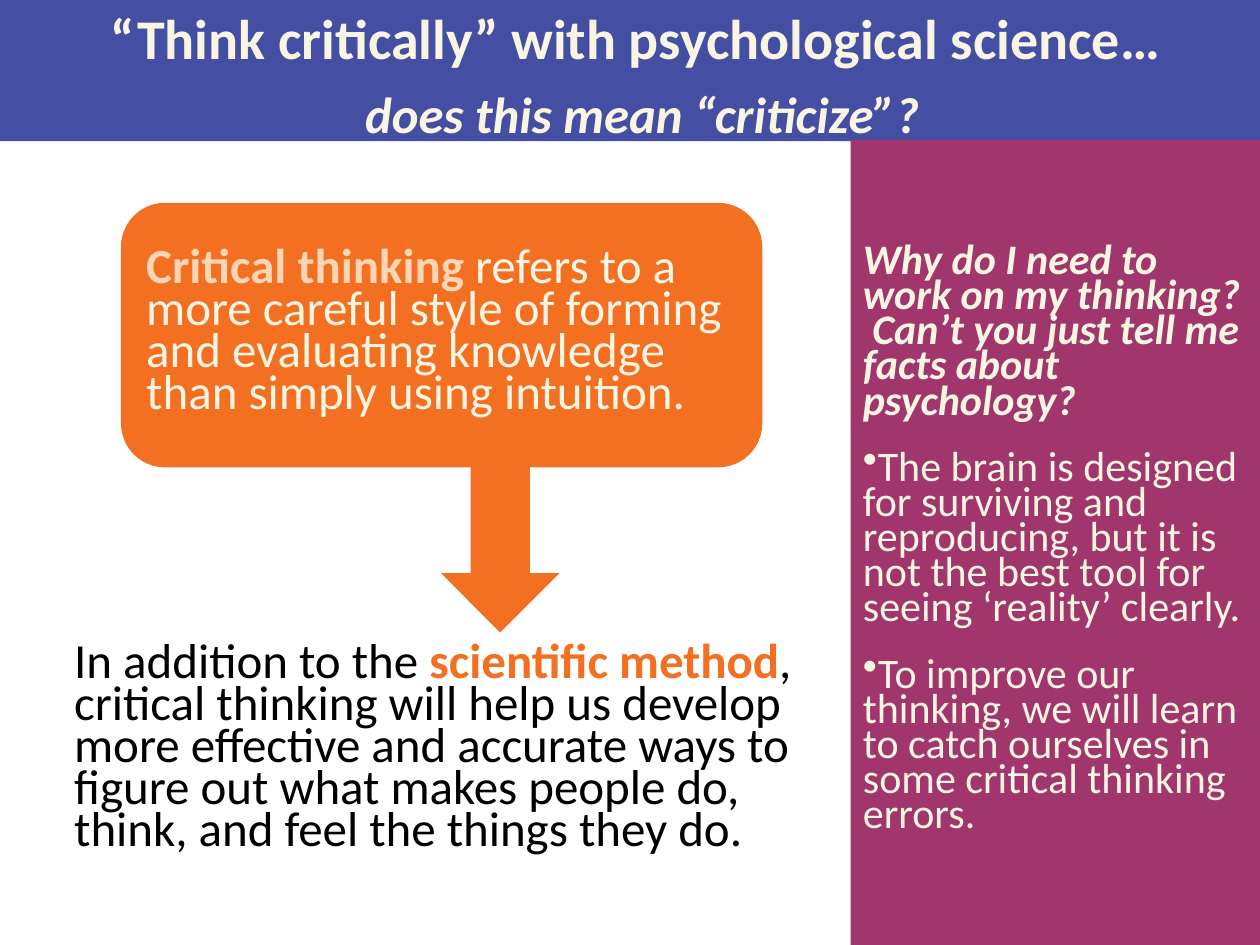
"""Build a slide on critical thinking in psychological science."""
from dataclasses import dataclass

from lxml.etree import SubElement
from pptx import Presentation
from pptx.dml.color import RGBColor
from pptx.enum.shapes import MSO_SHAPE as Shape
from pptx.enum.text import MSO_ANCHOR as Anchor, PP_ALIGN as Align
from pptx.oxml.ns import qn
from pptx.util import Inches, Pt


@dataclass(frozen=True)
class Theme:
    font: str = "Calibri"
    blue: RGBColor = RGBColor(0x44, 0x4E, 0xA2)
    orange: RGBColor = RGBColor(0xF3, 0x6F, 0x21)
    plum: RGBColor = RGBColor(0xA0, 0x36, 0x6C)
    cream: RGBColor = RGBColor(0xF8, 0xF6, 0xE3)
    peach: RGBColor = RGBColor(0xFC, 0xD5, 0xB5)
    black: RGBColor = RGBColor(0, 0, 0)
    title: Pt = Pt(32)
    subtitle: Pt = Pt(29)
    body: Pt = Pt(28)
    side: Pt = Pt(24)


theme = Theme()


def add_block(kind, left, top, width, height, fill=None):
    box = page.shapes.add_shape(kind, Inches(left), Inches(top), Inches(width), Inches(height))
    box.shadow.inherit = False
    box.line.fill.background()
    if fill is None:
        box.fill.background()
    else:
        box.fill.solid()
        box.fill.fore_color.rgb = fill
    box.text_frame.word_wrap = True
    box.text_frame.vertical_anchor = Anchor.MIDDLE
    return box


def style(para, size, color, leading, before=0, after=0, align=Align.LEFT):
    para.alignment = align
    para.line_spacing = Pt(leading)
    para.space_before, para.space_after = Pt(before), Pt(after)
    para.font.name = theme.font
    para.font.size = size
    para.font.color.rgb = color


deck = Presentation()
deck.slide_width, deck.slide_height = Inches(10), Inches(7.5)
page = deck.slides.add_slide(deck.slide_layouts[6])

definition = add_block(Shape.ROUNDED_RECTANGLE, 0.96, 1.61, 5.09, 2.1, theme.orange)
method = add_block(Shape.RECTANGLE, 0.49, 4.77, 6.02, 2.38)
passages = [
    (definition, theme.cream, [
        ("Critical thinking ", theme.peach),
        ("refers to a more careful style of forming and evaluating knowledge "
         "than simply using intuition.", None),
    ]),
    (method, theme.black, [
        ("In addition to the ", None),
        ("scientific method", theme.orange),
        (", critical thinking will help us develop more effective and accurate ways "
         "to figure out what makes people do, think, and feel the things they do.", None),
    ]),
]
for box, color, pieces in passages:
    para = box.text_frame.paragraphs[0]
    style(para, theme.body, color, 24, after=12)
    for words, accent in pieces:
        span = para.add_run()
        span.text = words
        span.font.color.rgb = accent or color
        span.font.bold = accent is not None

banner = add_block(Shape.RECTANGLE, 0, 0, 10, 1.12, theme.blue)
banner.text_frame.margin_left = Inches(0.3)
heading = banner.text_frame.paragraphs[0]
style(heading, theme.title, theme.cream, 42, align=Align.CENTER)
heading.font.bold = True
heading.add_run().text = "“Think critically” with psychological science… "
heading.add_line_break()
question = heading.add_run()
question.text = "does this mean “criticize”?"
question.font.size = theme.subtitle
question.font.italic = True

add_block(Shape.DOWN_ARROW, 3.5, 3.36, 0.94, 1.66, theme.orange)

sidebar = add_block(Shape.RECTANGLE, 6.75, 1.11, 3.25, 6.39, theme.plum)
notes = [
    "Why do I need to work on my thinking?  Can’t you just tell me facts about psychology?",
    "The brain is designed for surviving and reproducing, but it is not the best tool "
    "for seeing ‘reality’ clearly.",
    "To improve our thinking, we will learn to catch ourselves in some critical thinking errors.",
]
for index, words in enumerate(notes):
    frame = sidebar.text_frame
    para = frame.add_paragraph() if index else frame.paragraphs[0]
    if index:
        SubElement(para._p.get_or_add_pPr(), qn("a:buChar")).set("char", "•")
    style(para, theme.side, theme.cream, 20, before=6, after=12)
    para.font.bold = para.font.italic = index == 0
    para.add_run().text = words

deck.save("out.pptx")
